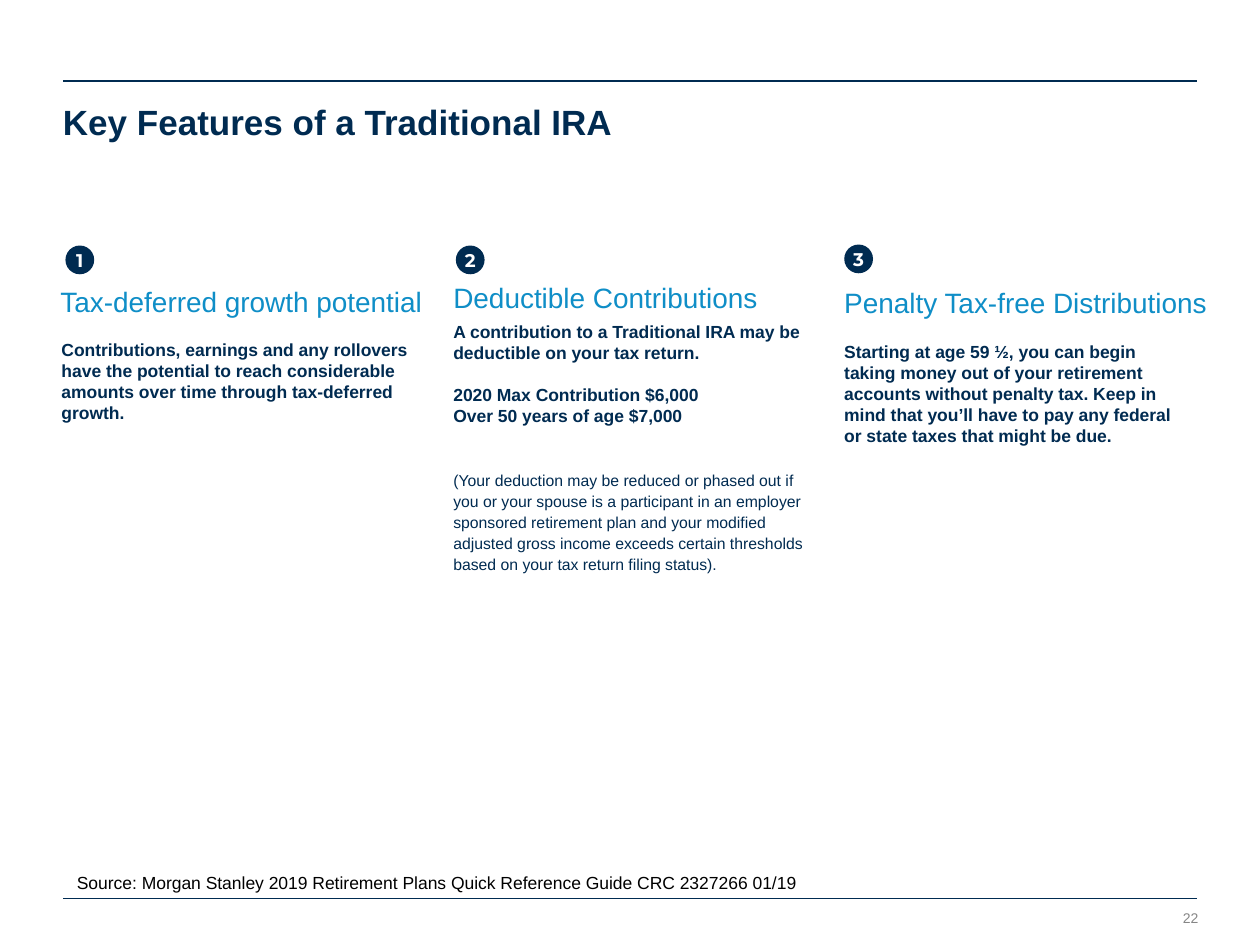
from dataclasses import dataclass

from lxml.etree import SubElement
from pptx import Presentation
from pptx.dml.color import RGBColor
from pptx.enum.shapes import MSO_CONNECTOR, MSO_SHAPE
from pptx.enum.text import MSO_ANCHOR, PP_ALIGN
from pptx.oxml.ns import qn
from pptx.slide import Slide
from pptx.text.text import TextFrame
from pptx.util import Cm, Pt

NAVY = RGBColor(0x00, 0x2B, 0x51)
BLUE = RGBColor(0x0F, 0x8E, 0xC7)
GRAY = RGBColor(0x86, 0x86, 0x86)
BLACK = RGBColor(0x00, 0x00, 0x00)
WHITE = RGBColor(0xFF, 0xFF, 0xFF)

MARGIN, RIGHT = 1.27, 24.13
BADGE_SIZE = 0.58
HEADING_HEIGHT = 0.69


@dataclass
class Para:
    text: str
    size: float = 10
    color: RGBColor = NAVY
    bold: bool = False
    font: str = "Arial"
    align: PP_ALIGN = PP_ALIGN.LEFT
    line_pt: float | None = None
    before_pt: float = 0


@dataclass
class Box:
    """Left, top, width and height in centimetres."""
    x: float
    y: float
    w: float
    h: float


@dataclass
class Feature:
    badge_x: float
    badge_y: float
    heading: str
    heading_box: Box
    body: list[Para]
    body_box: Box


def body_para(text: str, size: float = 10, bold: bool = True, before_pt: float = 0) -> Para:
    return Para(text, size, bold=bold, line_pt=12, before_pt=before_pt)


FEATURES = [
    Feature(1.32, 4.95, "Tax-deferred growth potential", Box(1.22, 5.74, 7.39, HEADING_HEIGHT),
            [body_para("Contributions, earnings and any rollovers have the potential to reach "
                       "considerable amounts over time through tax-deferred growth.")],
            Box(1.24, 6.83, 7.11, 1.7)),
    Feature(9.19, 4.95, "Deductible Contributions", Box(9.14, 5.66, 7.11, HEADING_HEIGHT),
            [body_para("A contribution to a Traditional IRA may be deductible on your tax return."),
             body_para("2020 Max Contribution $6,000", before_pt=12),
             body_para("Over 50 years of age $7,000"),
             body_para("(Your deduction may be reduced or phased out if you or your spouse is a "
                       "participant in an employer sponsored retirement plan and your modified "
                       "adjusted gross income exceeds certain thresholds based on your tax "
                       "return filing status).", size=9, bold=False, before_pt=24)],
            Box(9.14, 6.48, 7.11, 5.56)),
    Feature(17.02, 4.93, "Penalty Tax-free Distributions", Box(17.02, 5.75, 7.44, HEADING_HEIGHT),
            [body_para("Starting at age 59 ½, you can begin taking money out of your retirement "
                       "accounts without penalty tax. Keep in mind that you’ll have to pay any "
                       "federal or state taxes that might be due.")],
            Box(17.02, 6.88, 6.81, 2.13)),
]


def fill_text(tf: TextFrame, paras: list[Para], wrap: bool) -> None:
    tf.margin_left = tf.margin_top = tf.margin_right = tf.margin_bottom = 0
    tf.word_wrap = wrap
    for i, para in enumerate(paras):
        p = tf.add_paragraph() if i else tf.paragraphs[0]
        p.text = para.text
        p.alignment = para.align
        if para.line_pt:
            p.line_spacing = Pt(para.line_pt)
        if para.before_pt:
            p.space_before = Pt(para.before_pt)
        for r in p.runs:
            r.font.name = para.font
            r.font.size = Pt(para.size)
            r.font.bold = para.bold
            r.font.color.rgb = para.color


def add_text(s: Slide, box: Box, paras: list[Para], wrap: bool = True) -> None:
    sp = s.shapes.add_textbox(Cm(box.x), Cm(box.y), Cm(box.w), Cm(box.h))
    fill_text(sp.text_frame, paras, wrap)


def add_rule(s: Slide, y: float, width_pt: float) -> None:
    line = s.shapes.add_connector(MSO_CONNECTOR.STRAIGHT, Cm(MARGIN), Cm(y), Cm(RIGHT), Cm(y))
    line.line.color.rgb = NAVY
    line.line.width = Pt(width_pt)
    SubElement(line._element.spPr, qn("a:effectLst"))


def add_badge(s: Slide, x: float, y: float, number: int) -> None:
    sp = s.shapes.add_shape(MSO_SHAPE.OVAL, Cm(x), Cm(y), Cm(BADGE_SIZE), Cm(BADGE_SIZE))
    sp.shadow.inherit = False
    sp.fill.solid()
    sp.fill.fore_color.rgb = NAVY
    sp.line.fill.background()
    sp.text_frame.vertical_anchor = MSO_ANCHOR.MIDDLE
    digit = Para(str(number), 10.5, WHITE, True, "Montserrat", PP_ALIGN.CENTER)
    fill_text(sp.text_frame, [digit], wrap=False)


def add_feature(s: Slide, number: int, feature: Feature) -> None:
    add_badge(s, feature.badge_x, feature.badge_y, number)
    add_text(s, feature.heading_box, [Para(feature.heading, 16, BLUE)], wrap=False)
    add_text(s, feature.body_box, feature.body)


def main() -> None:
    prs = Presentation()
    prs.slide_width, prs.slide_height = Cm(25.4), Cm(19.05)
    s = prs.slides.add_slide(prs.slide_layouts[6])

    add_rule(s, 1.63, 1)
    add_rule(s, 18.11, 0.5)
    add_text(s, Box(MARGIN, 2.03, 22.83, 0.86),
             [Para("Key Features of a Traditional IRA", 20, bold=True)])
    for number, feature in enumerate(FEATURES, start=1):
        add_feature(s, number, feature)
    add_text(s, Box(1.55, 17.58, 14.71, 0.43),
             [Para("Source: Morgan Stanley 2019 Retirement Plans Quick Reference Guide "
                   "CRC 2327266 01/19", color=BLACK)], wrap=False)
    add_text(s, Box(23.8, 18.34, 0.36, 0.33),
             [Para("22", 8, GRAY, align=PP_ALIGN.RIGHT)], wrap=False)
    prs.save("out.pptx")


if __name__ == "__main__":
    main()
